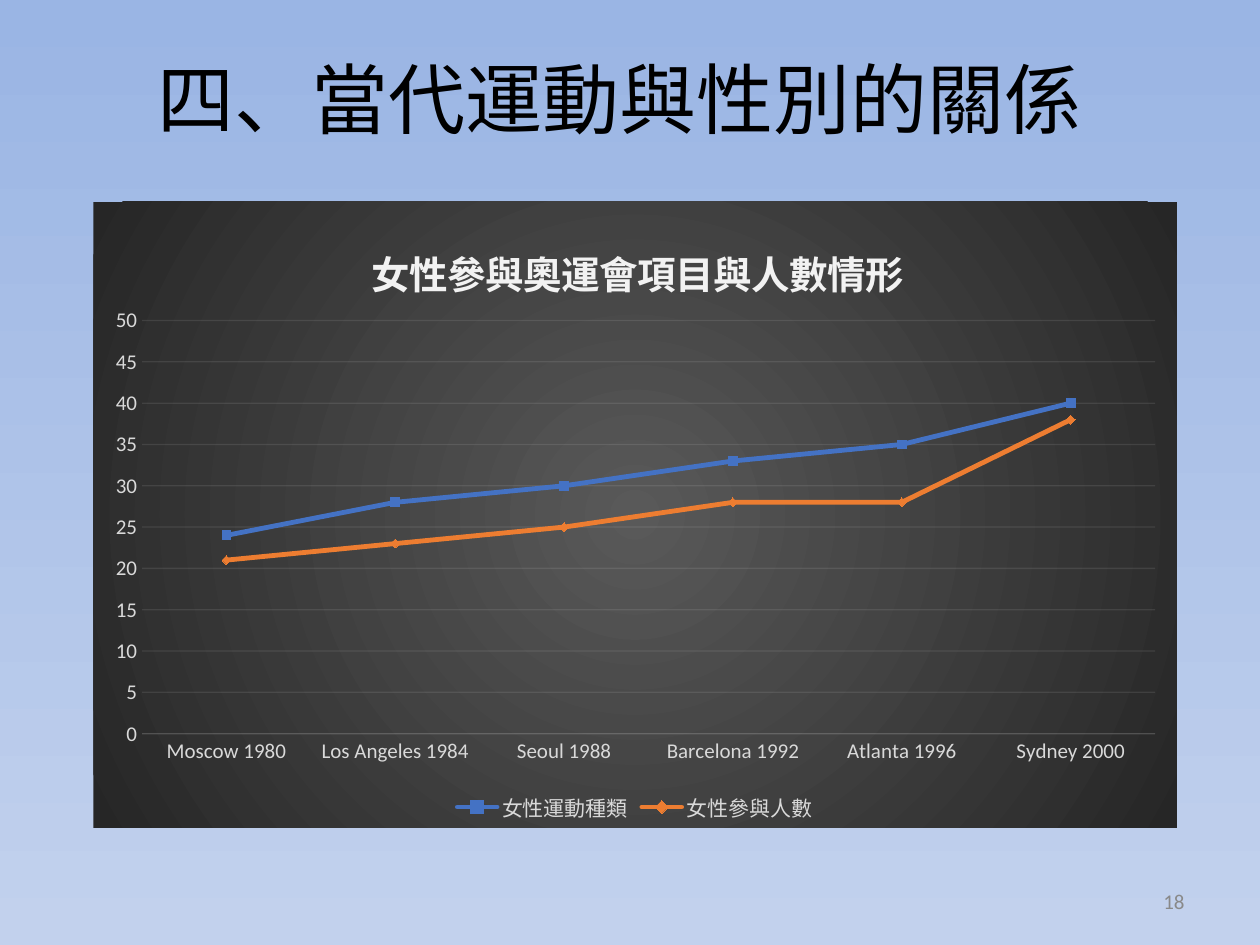
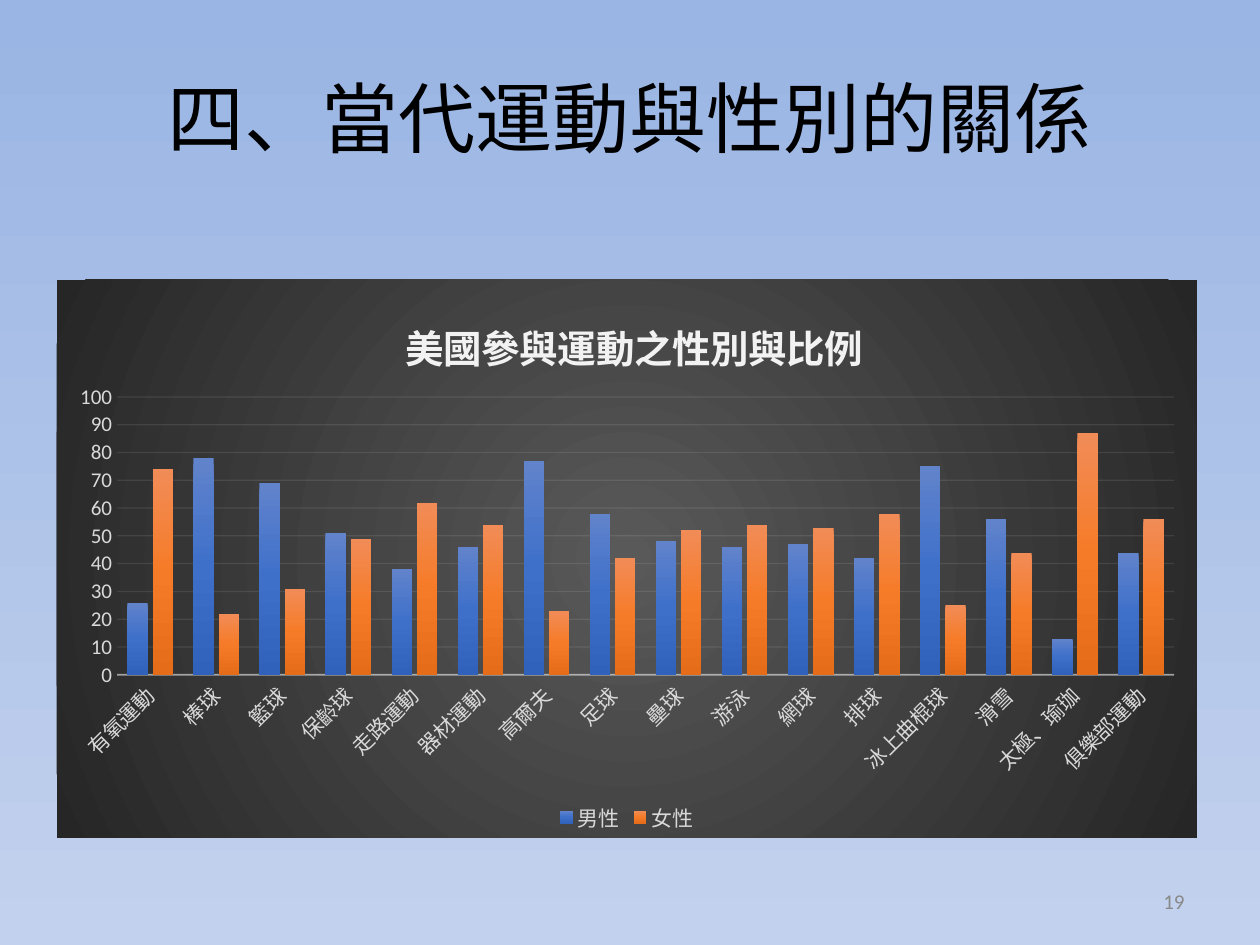
from lxml.etree import SubElement
from pptx import Presentation
from pptx.chart.data import CategoryChartData
from pptx.dml.color import RGBColor
from pptx.enum.chart import XL_CHART_TYPE, XL_LEGEND_POSITION, XL_TICK_MARK
from pptx.enum.text import MSO_ANCHOR, PP_ALIGN
from pptx.oxml.ns import qn
from pptx.util import Inches, Pt

COLORS = {
    "title": "000000", "number": "898989", "chart_title": "F2F2F2",
    "label": "D9D9D9", "rule": "F2F2F2", "blue": "4472C4", "orange": "ED7D31",
}
SKY = ["9AB5E4", "C2D1ED"]
CHARCOAL = ["595959", "262626"]
BLUE_COLUMN = ["6183CB", "3E70CA", "3062BB"]
ORANGE_COLUMN = ["F18C57", "F67B28", "E56C19"]
LATIN, CHINESE = "Calibri", "Noto Sans CJK SC"
HEADING = "四、當代運動與性別的關係"

# "plot" is left, top, width, height and "title_at" left, top, as shares of the chart.
SLIDES = [
    {
        "number": 18, "heading_at": (0.42, 0.15), "chart_at": (0.74, 1.6, 8.6, 4.97),
        "kind": XL_CHART_TYPE.LINE, "title": "女性參與奧運會項目與人數情形",
        "title_at": (0.25, 0.05), "plot": (0.045, 0.19, 0.935, 0.66),
        "top": 50, "step": 5, "axis_line": (0.75, 10),
        "categories": ["Moscow 1980", "Los Angeles 1984", "Seoul 1988",
                       "Barcelona 1992", "Atlanta 1996", "Sydney 2000"],
        "series": [
            ("女性運動種類", "blue", [24, 28, 30, 33, 35, 40]),
            ("女性參與人數", "orange", [21, 23, 25, 28, 28, 38]),
        ],
    },
    {
        "number": 19, "heading_at": (0.5, 0.3), "chart_at": (0.45, 2.22, 9.05, 4.43),
        "kind": XL_CHART_TYPE.COLUMN_CLUSTERED, "title": "美國參與運動之性別與比例",
        "title_at": (0.3, 0.05), "plot": (0.053, 0.21, 0.927, 0.498),
        "top": 100, "step": 10, "axis_line": (1, 54),
        "categories": ["有氧運動", "棒球", "籃球", "保齡球", "走路運動", "器材運動",
                       "高爾夫", "足球", "壘球", "游泳", "網球", "排球",
                       "冰上曲棍球", "滑雪", "太極、瑜珈", "俱樂部運動"],
        "series": [
            ("男性", BLUE_COLUMN,
             [26, 78, 69, 51, 38, 46, 77, 58, 48, 46, 47, 42, 75, 56, 13, 44]),
            ("女性", ORANGE_COLUMN,
             [74, 22, 31, 49, 62, 54, 23, 42, 52, 54, 53, 58, 25, 44, 87, 56]),
        ],
    },
]


def color_of(name):
    return RGBColor.from_string(COLORS[name])


def add_gradient(parent, stops, radial=False):
    """Append a gradient of evenly spaced stops, downwards or from the centre."""
    gradient = SubElement(parent, qn("a:gradFill"), rotWithShape="1")
    stop_list = SubElement(gradient, qn("a:gsLst"))
    for index, color in enumerate(stops):
        position = 100000 * index // (len(stops) - 1)
        stop = SubElement(stop_list, qn("a:gs"), pos=str(position))
        SubElement(stop, qn("a:srgbClr"), val=color)
    if radial:
        circle = SubElement(gradient, qn("a:path"), path="circle")
        SubElement(circle, qn("a:fillToRect"),
                   {side: "50000" for side in ("l", "t", "r", "b")})
    else:
        SubElement(gradient, qn("a:lin"), ang="5400000", scaled="0")
    return gradient


def fill_gradient(fill, owner, stops):
    """Turn the fill of the owner element into a downward gradient."""
    fill.solid()
    solid = next(owner.iter(qn("a:solidFill")))
    parent = solid.getparent()
    parent.replace(solid, add_gradient(parent, stops))


def draw_faint(line, owner, width, percent):
    """Draw a translucent rule; it must be the owner's first coloured part."""
    line.width = Pt(width)
    line.color.rgb = color_of("rule")
    SubElement(next(owner.iter(qn("a:srgbClr"))), qn("a:alpha"), val=str(percent * 1000))


def style_font(font, size, color, name=LATIN):
    font.size = Pt(size)
    font.color.rgb = color_of(color)
    font.name = name


def add_text(page, text, place, size, color, font, align):
    box = page.shapes.add_textbox(*map(Inches, place))
    box.text_frame.word_wrap = True
    box.text_frame.vertical_anchor = MSO_ANCHOR.MIDDLE
    para = box.text_frame.paragraphs[0]
    para.alignment = align
    span = para.add_run()
    span.text = text
    style_font(span.font, size, color, font)
    SubElement(span.font._element, qn("a:ea"), typeface=font)


def place_part(part, shares, inner=False):
    """Fix a chart part by its left, top and optional width and height shares."""
    layout = part.find(qn("c:layout"))
    if layout is None:
        layout = part.makeelement(qn("c:layout"))
        text = part.find(qn("c:tx"))
        part.insert(0 if text is None else 1, layout)
    manual = SubElement(layout, qn("c:manualLayout"))
    if inner:
        SubElement(manual, qn("c:layoutTarget"), val="inner")
    for mode in ("xMode", "yMode"):
        SubElement(manual, qn(f"c:{mode}"), val="edge")
    for name, share in zip("xywh", shares):
        SubElement(manual, qn(f"c:{name}"), val=str(share))


def style_axes(chart, content):
    category, value = chart.category_axis, chart.value_axis
    value.minimum_scale, value.maximum_scale = 0, content["top"]
    value.major_unit = content["step"]
    draw_faint(value.major_gridlines.format.line, value._element, 0.75, 10)
    value.format.line.fill.background()
    draw_faint(category.format.line, category._element, *content["axis_line"])
    for axis in (category, value):
        axis.major_tick_mark = axis.minor_tick_mark = XL_TICK_MARK.NONE
        style_font(axis.tick_labels.font, 12, "label")


def style_lines(chart, content):
    for series, (_, color, _) in zip(chart.plots[0].series, content["series"]):
        series.smooth = False
        series.marker.style = None
        series.format.line.width = Pt(2.75)
        series.format.line.color.rgb = color_of(color)
        next(series._element.iter(qn("a:ln"))).set("cap", "rnd")


def style_columns(chart, content):
    plot = chart.plots[0]
    plot.gap_width, plot.overlap = 100, -24
    for series, (_, stops, _) in zip(plot.series, content["series"]):
        series.invert_if_negative = False
        fill_gradient(series.format.fill, series._element, stops)
    labels = chart.category_axis._element.find(qn("c:txPr"))
    labels.find(qn("a:bodyPr")).set("rot", "-2700000")


def add_chart(page, content):
    data = CategoryChartData()
    data.categories = content["categories"]
    for name, _, values in content["series"]:
        data.add_series(name, values)
    place = map(Inches, content["chart_at"])
    chart = page.shapes.add_chart(content["kind"], *place, data).chart
    style_font(chart.font, 10, "label")
    chart.plots[0].vary_by_categories = False

    para = chart.chart_title.text_frame.paragraphs[0]
    span = para.add_run()
    span.text = content["title"]
    style_font(span.font, 22, "chart_title")
    span.font.bold = True
    chart.chart_title.include_in_layout = False
    place_part(chart.chart_title._element, content["title_at"])

    chart.has_legend = True
    chart.legend.position = XL_LEGEND_POSITION.BOTTOM
    chart.legend.include_in_layout = False
    style_font(chart.legend.font, 12, "label")

    style_axes(chart, content)
    if content["kind"] == XL_CHART_TYPE.LINE:
        style_lines(chart, content)
    else:
        style_columns(chart, content)

    space = chart._chartSpace
    place_part(next(space.iter(qn("c:plotArea"))), content["plot"], inner=True)
    panel = space.makeelement(qn("c:spPr"))
    space.find(qn("c:chart")).addnext(panel)
    add_gradient(panel, CHARCOAL, radial=True)
    SubElement(SubElement(panel, qn("a:ln")), qn("a:noFill"))


def add_page(deck, content):
    page = deck.slides.add_slide(deck.slide_layouts[6])
    fill_gradient(page.background.fill, page._element, SKY)
    add_chart(page, content)
    add_text(page, HEADING, (*content["heading_at"], 9, 1.25),
             44, "title", CHINESE, PP_ALIGN.CENTER)
    add_text(page, str(content["number"]), (7.17, 6.95, 2.33, 0.4),
             12, "number", LATIN, PP_ALIGN.RIGHT)


def main():
    deck = Presentation()
    deck.slide_width, deck.slide_height = Inches(10), Inches(7.5)
    for content in SLIDES:
        add_page(deck, content)
    deck.save("out.pptx")


if __name__ == "__main__":
    main()
